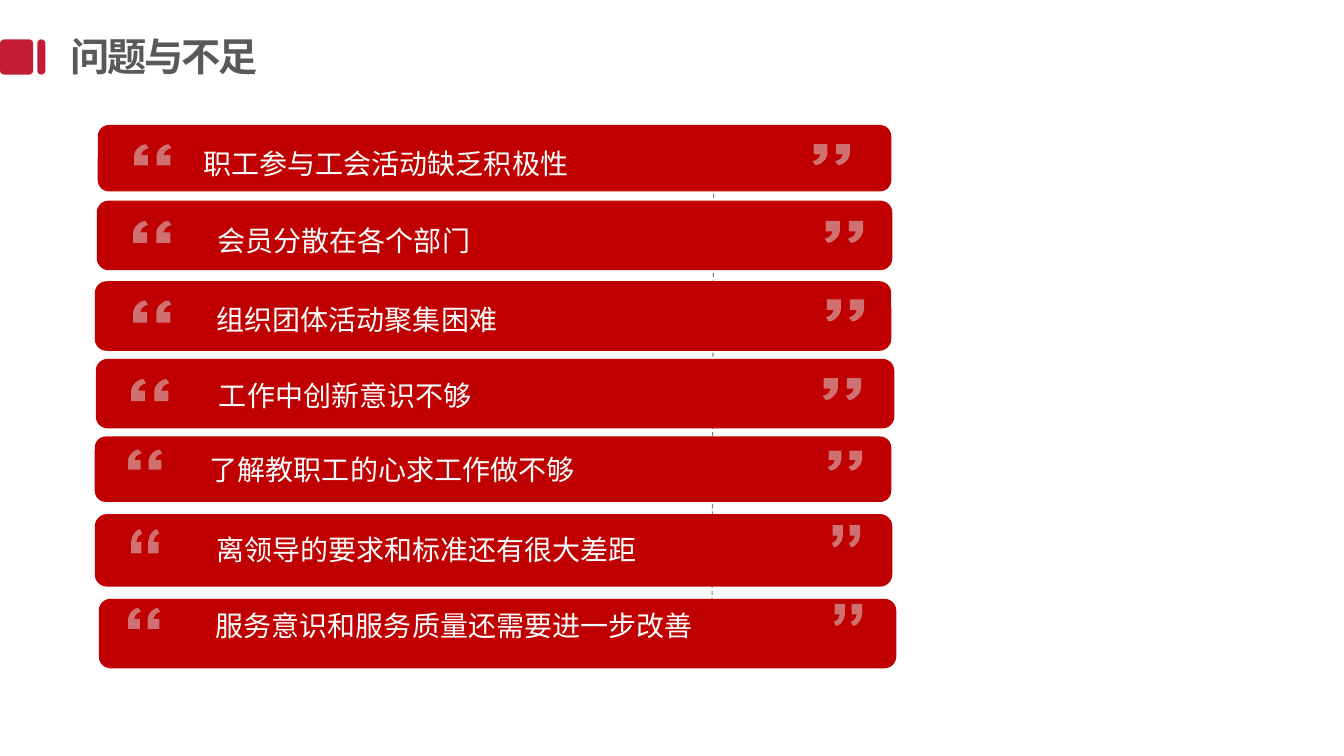
"""Build the slide listing seven problems and shortcomings as quoted red bars."""
from lxml import etree
from pptx import Presentation
from pptx.dml.color import RGBColor
from pptx.enum.dml import MSO_LINE
from pptx.enum.shapes import MSO_CONNECTOR, MSO_SHAPE
from pptx.enum.text import MSO_ANCHOR, PP_ALIGN
from pptx.oxml.ns import qn
from pptx.util import Inches, Pt

CRIMSON = RGBColor(0xC4, 0x1C, 0x35)
RED = RGBColor(0xC0, 0x00, 0x00)
QUOTE_GRAY = RGBColor(0xE0, 0xE0, 0xE0)
LINE_GRAY = RGBColor(0x80, 0x80, 0x80)
TITLE_GRAY = RGBColor(0x59, 0x59, 0x59)
WHITE = RGBColor(0xFF, 0xFF, 0xFF)

QUOTE_WIDTH, QUOTE_HEIGHT, MARK_STEP = 38, 21, 23
OPEN_MARK = [(12, 0), (8, 1), (5, 3), (2, 6), (1, 8), (0, 11), (0, 14), (0, 21),
             (14, 21), (14, 11), (7, 11), (8, 9), (9, 7), (12, 5), (15, 4)]
OPEN_QUOTE = [OPEN_MARK, [(x + MARK_STEP, y) for x, y in OPEN_MARK]]
CLOSE_QUOTE = [[(QUOTE_WIDTH - x, QUOTE_HEIGHT - y) for x, y in mark] for mark in OPEN_QUOTE]

LEFT, CENTER = PP_ALIGN.LEFT, PP_ALIGN.CENTER
ROWS = [
    ("职工参与工会活动缺乏积极性", (0.97, 1.24, 7.87, 0.66), (1.33, 1.43, 0.37, 0.21),
     (8.06, 1.43, 0.37, 0.21), (1.92, 1.4, 5.74, 0.44), LEFT, True),
    ("会员分散在各个部门", (0.96, 1.99, 7.89, 0.69), (1.32, 2.19, 0.38, 0.22),
     (8.18, 2.19, 0.38, 0.22), (2.06, 2.17, 4.02, 0.44), LEFT, True),
    ("组织团体活动聚集困难", (0.94, 2.79, 7.9, 0.69), (1.32, 2.98, 0.38, 0.22),
     (8.19, 2.97, 0.38, 0.22), (2.05, 2.95, 8.08, 0.44), LEFT, True),
    ("工作中创新意识不够", (0.95, 3.56, 7.92, 0.69), (1.3, 3.76, 0.38, 0.22),
     (8.16, 3.75, 0.38, 0.22), (2.06, 3.71, 2.73, 0.44), CENTER, False),
    ("了解教职工的心求工作做不够", (0.94, 4.33, 7.9, 0.65), (1.27, 4.46, 0.34, 0.2),
     (8.21, 4.47, 0.34, 0.2), (0.32, 4.44, 7.14, 0.77), CENTER, True),
    ("离领导的要求和标准还有很大差距", (0.94, 5.1, 7.91, 0.72), (1.3, 5.25, 0.28, 0.24),
     (8.25, 5.21, 0.28, 0.22), (1.64, 5.23, 5.18, 0.44), CENTER, True),
    ("服务意识和服务质量还需要进一步改善", (0.98, 5.94, 7.91, 0.69), (1.27, 6.03, 0.32, 0.21),
     (8.27, 5.99, 0.28, 0.22), (2.02, 5.99, 4.97, 0.44), CENTER, False),
]

presentation = Presentation()
presentation.slide_width = Inches(13.33)
presentation.slide_height = Inches(7.5)
slide = presentation.slides.add_slide(presentation.slide_layouts[6])


def add_bar(box, color, corner):
    bar = slide.shapes.add_shape(MSO_SHAPE.ROUNDED_RECTANGLE, *map(Inches, box))
    bar.adjustments[0] = corner
    bar.shadow.inherit = False
    bar.fill.solid()
    bar.fill.fore_color.rgb = color
    bar.line.fill.background()


def add_quote(box, marks):
    left, top, width, height = map(Inches, box)
    builder = slide.shapes.build_freeform(
        *marks[0][0], scale=(width / QUOTE_WIDTH, height / QUOTE_HEIGHT))
    builder.add_line_segments(marks[0][1:], close=True)
    builder.move_to(*marks[1][0])
    builder.add_line_segments(marks[1][1:], close=True)
    quote = builder.convert_to_shape(left, top)
    quote.shadow.inherit = False
    quote.fill.solid()
    quote.fill.fore_color.rgb = QUOTE_GRAY
    quote.line.fill.background()
    color = quote.fill._xPr.find(qn("a:solidFill"))[0]
    etree.SubElement(color, qn("a:alpha"), val="50000")


add_bar((0.37, 0.39, 0.08, 0.35), CRIMSON, 0.5)
add_bar((0, 0.39, 0.33, 0.35), CRIMSON, 0.13)

connector = slide.shapes.add_connector(
    MSO_CONNECTOR.STRAIGHT, Inches(7.08), Inches(1.42), Inches(7.06), Inches(6.42))
connector.line.color.rgb = LINE_GRAY
connector.line.width = Pt(0.75)
connector.line.dash_style = MSO_LINE.DASH
etree.SubElement(connector._element.spPr, qn("a:effectLst"))

for text, bar_box, open_box, close_box, text_box, alignment, wrap in ROWS:
    add_bar(bar_box, RED, 0.17)
    add_quote(open_box, OPEN_QUOTE)
    add_quote(close_box, CLOSE_QUOTE)
    label = slide.shapes.add_textbox(*map(Inches, text_box))
    label.text_frame.word_wrap = wrap
    label.text_frame.text = text
    paragraph = label.text_frame.paragraphs[0]
    paragraph.alignment = alignment
    font = paragraph.runs[0].font
    font.name = "Arial"
    font.size = Pt(20)
    font.color.rgb = WHITE

title = slide.shapes.add_textbox(Inches(0.63), Inches(0.35), Inches(8.6), Inches(0.48))
title_frame = title.text_frame
title_frame.word_wrap = True
title_frame.vertical_anchor = MSO_ANCHOR.MIDDLE
title_frame.margin_left = title_frame.margin_right = Inches(0.07)
title_frame.margin_top = title_frame.margin_bottom = Inches(0.04)
title_frame.text = "问题与不足"
paragraph = title_frame.paragraphs[0]
paragraph.line_spacing = 0.85
font = paragraph.runs[0].font
font.name = "Noto Sans CJK SC"
font.size = Pt(28)
font.bold = True
font.color.rgb = TITLE_GRAY
run_properties = paragraph.runs[0]._r.get_or_add_rPr()
run_properties.set("spc", "-150")
etree.SubElement(run_properties, qn("a:ea"), typeface="Noto Sans CJK SC")

presentation.save("out.pptx")
